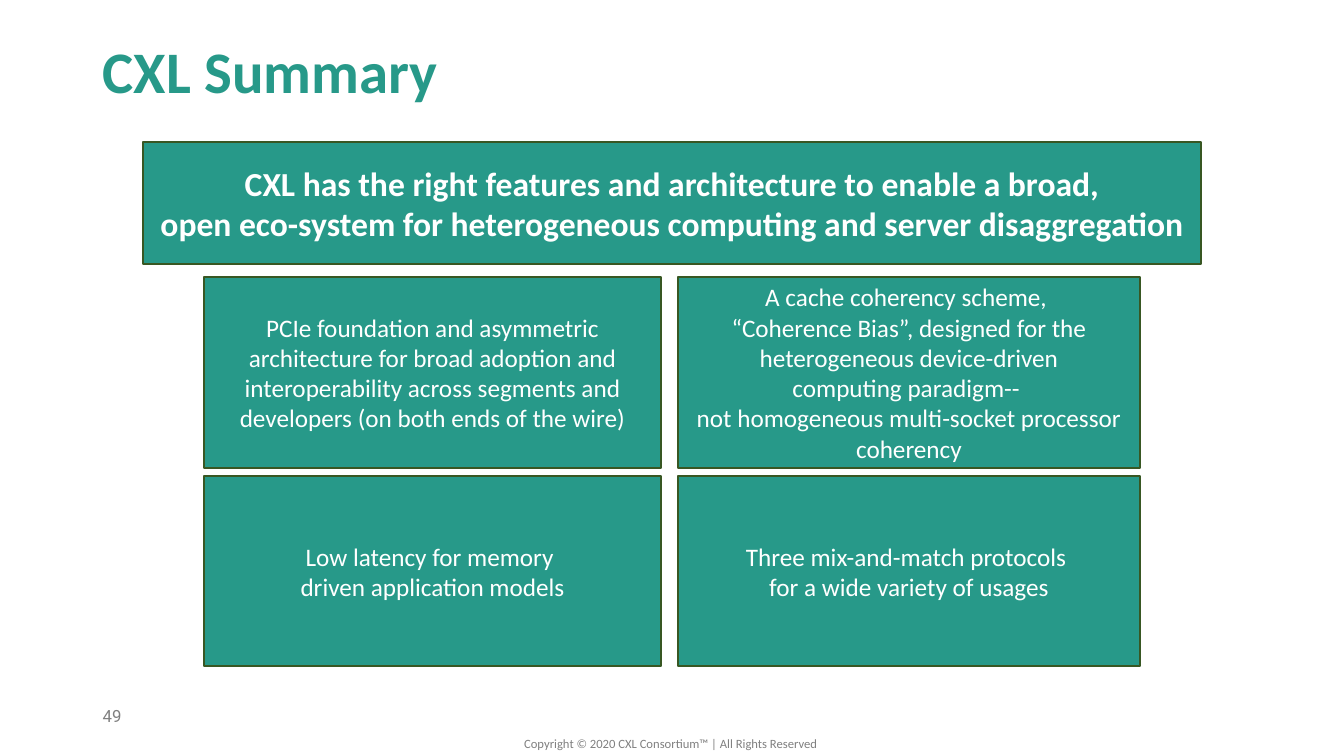
"""Build the CXL Summary slide: a headline banner over a two-by-two grid of points."""
from pptx import Presentation
from pptx.dml.color import RGBColor
from pptx.enum.shapes import MSO_SHAPE
from pptx.enum.text import MSO_ANCHOR, PP_ALIGN
from pptx.util import Inches, Pt

RECTANGLE = MSO_SHAPE.RECTANGLE
TOP, MIDDLE = MSO_ANCHOR.TOP, MSO_ANCHOR.MIDDLE
LEFT, CENTER = PP_ALIGN.LEFT, PP_ALIGN.CENTER
TEAL, DARK_GREEN, WHITE, GRAY = "279989", "385723", "FFFFFF", "808080"


def write(box, text, size, color, align=LEFT, anchor=TOP, bold=False, font="Calibri"):
    frame = box.text_frame
    frame.word_wrap = True
    frame.vertical_anchor = anchor
    frame.text = text
    for para in frame.paragraphs:
        para.alignment = align
        for span in para.runs:
            span.font.name = font
            span.font.size = Pt(size)
            span.font.bold = bold
            span.font.color.rgb = RGBColor.from_string(color)


def add_panel(page, left, top, width, height, text, size, bold=False):
    panel = page.shapes.add_shape(
        RECTANGLE, Inches(left), Inches(top), Inches(width), Inches(height))
    panel.shadow.inherit = False
    panel.fill.solid()
    panel.fill.fore_color.rgb = RGBColor.from_string(TEAL)
    panel.line.color.rgb = RGBColor.from_string(DARK_GREEN)
    panel.line.width = Pt(1.5)
    write(panel, text, size, WHITE, CENTER, MIDDLE, bold)


deck = Presentation()
deck.slide_width, deck.slide_height = Inches(13.33), Inches(7.5)
page = deck.slides.add_slide(deck.slide_layouts[6])

title = page.shapes.add_textbox(Inches(0.92), Inches(0.35), Inches(11.5), Inches(0.78))
write(title, "CXL Summary", 42, TEAL, anchor=MIDDLE, bold=True)
title.text_frame.paragraphs[0].line_spacing = 0.9

add_panel(page, 1.42, 1.41, 10.49, 1.21,
          "CXL has the right features and architecture to enable a broad,\v"
          "open eco-system for heterogeneous computing and server disaggregation",
          24, bold=True)

columns = [(2.02, 4.54), (6.72, 4.59)]
rows = [
    (2.75, [
        "PCIe foundation and asymmetric architecture for broad adoption and "
        "interoperability across segments and developers (on both ends of the wire)",
        "A cache coherency scheme, \v“Coherence Bias”, designed for the "
        "heterogeneous device-driven\n"
        "computing paradigm-- \vnot homogeneous multi-socket processor coherency",
    ]),
    (4.72, [
        "Low latency for memory \vdriven application models",
        "Three mix-and-match protocols \vfor a wide variety of usages",
    ]),
]
for top, points in rows:
    for (left, width), point in zip(columns, points):
        add_panel(page, left, top, width, 1.89, point, 18)

copyright_line = page.shapes.add_textbox(
    Inches(3.51), Inches(7.25), Inches(6.31), Inches(0.25))
write(copyright_line, "Copyright © 2020 CXL Consortium™ | All Rights Reserved ", 9, GRAY, CENTER)

page_number = page.shapes.add_textbox(Inches(0.92), Inches(6.95), Inches(3), Inches(0.4))
write(page_number, "49", 12, GRAY, font="Roboto")

deck.save("out.pptx")
